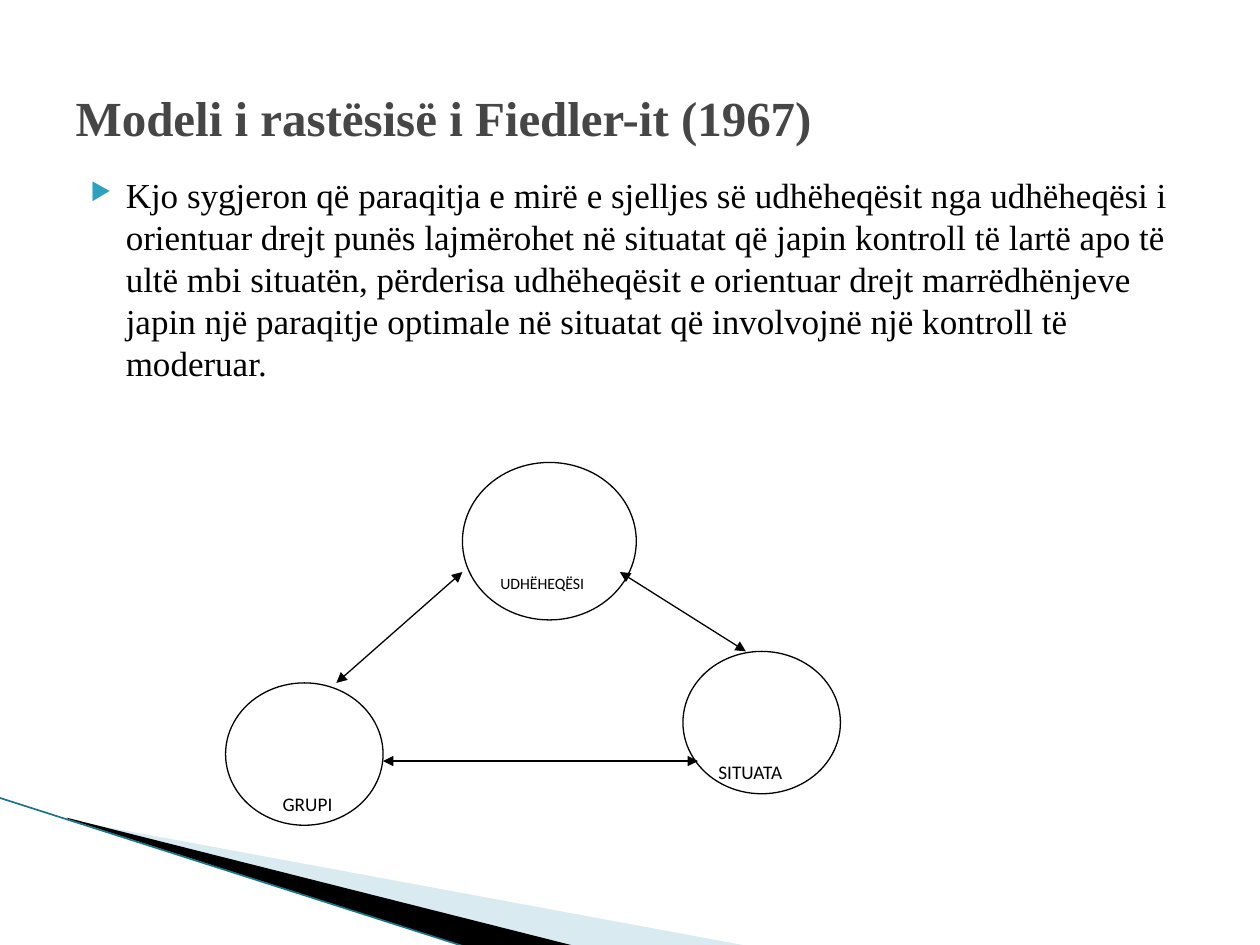
from lxml import etree
from pptx import Presentation
from pptx.dml.color import RGBColor
from pptx.enum.shapes import MSO_CONNECTOR, MSO_SHAPE
from pptx.enum.text import MSO_ANCHOR, PP_ALIGN
from pptx.oxml.ns import qn
from pptx.util import Inches, Pt

BLACK, WHITE = "000000", "FFFFFF"
ACCENT, TITLE_GREY, PALE_BLUE = "2DA2BF", "464646", "A0CBDC"
EDGE_TEAL = "1B7587"
SERIF, SANS = "Times New Roman", "Calibri"


def rgb(value):
    return RGBColor.from_string(value)


def box(*lengths):
    return [Inches(length) for length in lengths]


class SlideBuilder:
    """Holds the shared style and the slide being built."""

    outline = 0.75

    def __init__(self, slide):
        self.slide = slide
        self.shapes = slide.shapes

    def fill_text(self, frame, text, size, font, color, bold=False, **layout):
        frame.word_wrap = True
        for key, value in layout.items():
            setattr(frame, key, value)
        paragraph = frame.paragraphs[0]
        paragraph.alignment = PP_ALIGN.LEFT
        run = paragraph.add_run()
        run.text = text
        for key, value in {"size": Pt(size), "name": font, "bold": bold}.items():
            setattr(run.font, key, value)
        run.font.color.rgb = rgb(color)
        return paragraph

    def title(self, text, area):
        title = self.shapes.title
        title.left, title.top, title.width, title.height = box(*area)
        self.fill_text(title.text_frame, text, 28, SERIF, TITLE_GREY, bold=True,
                       vertical_anchor=MSO_ANCHOR.MIDDLE)

    def bullet_text(self, text, area):
        frame = self.shapes.add_textbox(*box(*area)).text_frame
        paragraph = self.fill_text(frame, text, 20, SERIF, BLACK)
        paragraph.line_spacing = Pt(24)
        properties = paragraph._p.get_or_add_pPr()
        properties.set("marL", str(Inches(0.4)))
        properties.set("indent", str(Inches(-0.28)))
        color = etree.SubElement(properties, qn("a:buClr"))
        etree.SubElement(color, qn("a:srgbClr"), val=ACCENT)
        etree.SubElement(properties, qn("a:buSzPct"), val="68000")
        etree.SubElement(properties, qn("a:buChar"), char="▶")

    def wedge(self, points, color, opacity=100):
        start, *rest = [box(*point) for point in points]
        builder = self.shapes.build_freeform(*start)
        builder.add_line_segments(rest)
        wedge = builder.convert_to_shape()
        wedge.shadow.inherit = False
        wedge.fill.solid()
        wedge.fill.fore_color.rgb = rgb(color)
        wedge.line.fill.background()
        if opacity < 100:
            fill = wedge._element.spPr.find(qn("a:solidFill"))
            etree.SubElement(fill[0], qn("a:alpha"), val=str(opacity * 1000))

    def circle(self, text, area, size, indent=0.1):
        circle = self.shapes.add_shape(MSO_SHAPE.OVAL, *box(*area))
        circle.shadow.inherit = False
        circle.fill.solid()
        circle.fill.fore_color.rgb = rgb(WHITE)
        circle.line.color.rgb = rgb(BLACK)
        circle.line.width = Pt(self.outline)
        self.fill_text(circle.text_frame, text, size, SANS, BLACK,
                       vertical_anchor=MSO_ANCHOR.TOP, margin_left=Inches(indent),
                       margin_right=0, margin_top=Inches(0.7), margin_bottom=0)

    def line(self, start, end, color=BLACK, width=outline, arrows=True):
        line = self.shapes.add_connector(MSO_CONNECTOR.STRAIGHT, *box(*start, *end))
        line.line.color.rgb = rgb(color)
        line.line.width = Pt(width)
        if arrows:
            outline = line._element.spPr.find(qn("a:ln"))
            for tag in ("a:headEnd", "a:tailEnd"):
                etree.SubElement(outline, qn(tag), type="triangle")
        etree.SubElement(line._element.spPr, qn("a:effectLst"))


def main():
    presentation = Presentation()
    presentation.slide_width, presentation.slide_height = box(10, 7.5)
    builder = SlideBuilder(presentation.slides.add_slide(presentation.slide_layouts[5]))

    # Corner decoration
    builder.wedge([(0.55, 6.51), (5.95, 7.51), (4.56, 7.51), (0.55, 6.5)], PALE_BLUE, 40)
    builder.wedge([(0.53, 6.49), (4.57, 7.51), (3.72, 7.52), (0.54, 6.5)], BLACK)
    builder.line((-0.01, 6.33), (3.71, 7.52), EDGE_TEAL, 0.95, arrows=False)

    # Title and explanation
    builder.title("Modeli i rastësisë i Fiedler-it (1967)", (0.5, 0.3, 9, 1.25))
    builder.bullet_text(
        "Kjo sygjeron që paraqitja e mirë e sjelljes së udhëheqësit nga udhëheqësi i "
        "orientuar drejt punës lajmërohet në situatat që japin kontroll të lartë apo të "
        "ultë mbi situatën, përderisa udhëheqësit e orientuar drejt marrëdhënjeve japin "
        "një paraqitje optimale në situatat që involvojnë një kontroll të moderuar.",
        (0.5, 1.33, 9, 3))

    # Leader, group and situation
    builder.circle("UDHËHEQËSI", (3.67, 3.67, 1.38, 1.25), 9)
    builder.circle("GRUPI", (1.79, 5.42, 1.25, 1.13), 11, indent=0.27)
    builder.circle("SITUATA", (5.42, 5.17, 1.25, 1.13), 11)

    # Mutual influence
    for start, end in [((2.67, 5.42), (3.67, 4.54)),
                       ((3.04, 6.04), (5.54, 6.04)),
                       ((5.92, 5.17), (4.92, 4.54))]:
        builder.line(start, end)

    presentation.save("out.pptx")


if __name__ == "__main__":
    main()
